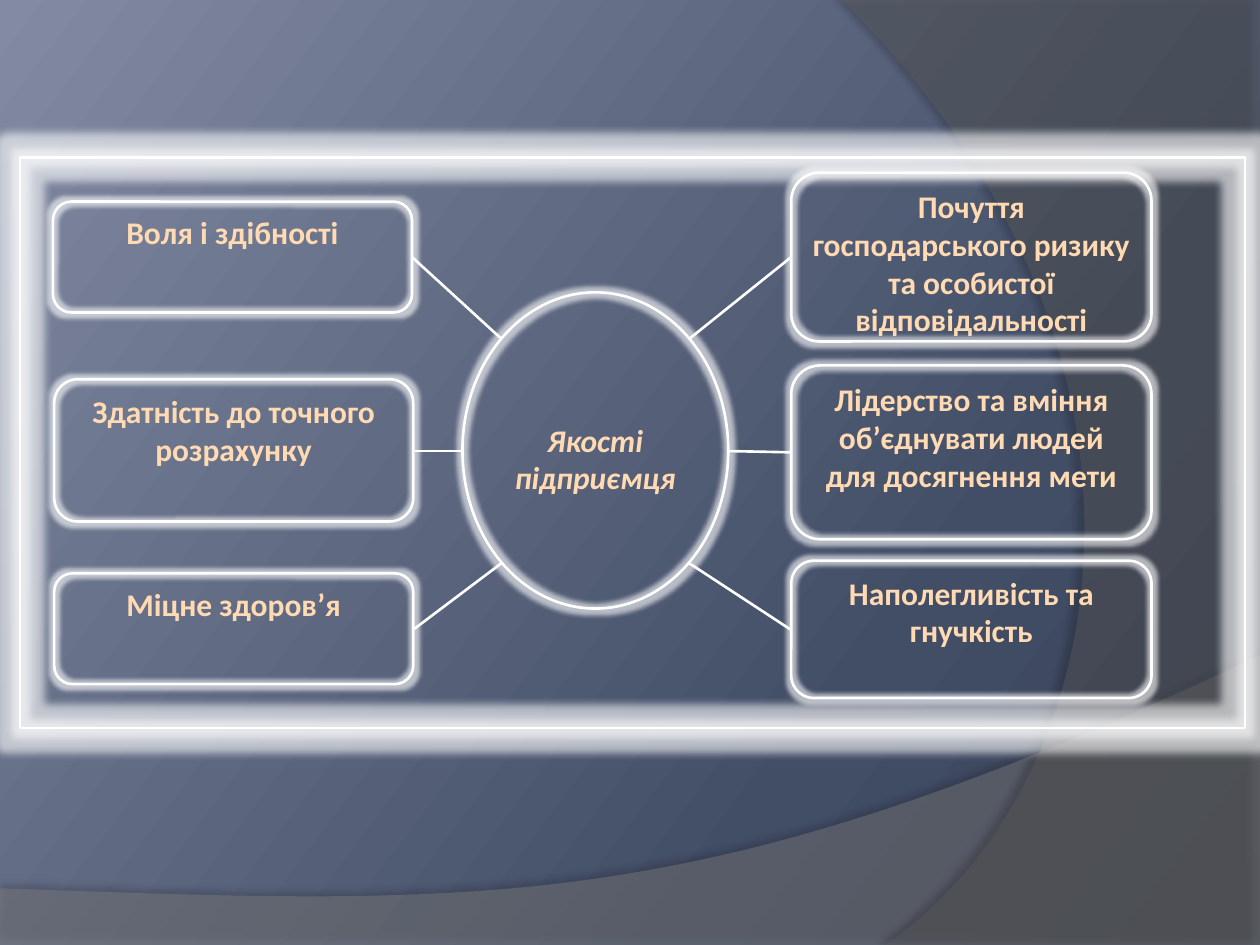
"""Build the slide on the qualities of an entrepreneur."""
from pptx import Presentation
from pptx.dml.color import RGBColor
from pptx.enum.shapes import MSO_CONNECTOR as CONN, MSO_SHAPE as SHAPE
from pptx.enum.text import MSO_ANCHOR as ANCHOR, PP_ALIGN as ALIGN
from pptx.oxml import parse_xml
from pptx.oxml.ns import nsdecls
from pptx.util import Inches, Pt

WHITE = RGBColor(0xFF, 0xFF, 0xFF)
BLACK = RGBColor(0x00, 0x00, 0x00)
PEACH = RGBColor(0xFF, 0xDA, 0xB2)
GREY = RGBColor(0x7F, 0x7F, 0x7F)
DARK_GREY = RGBColor(0x5E, 0x5E, 0x5E)
NAVY = RGBColor(0x37, 0x40, 0x56)
SLATE = RGBColor(0x42, 0x4D, 0x66)
STEEL = RGBColor(0x82, 0x8B, 0xA3)


def add_effect(sp, tag, color, alpha, **attrs):
    values = " ".join(f'{name}="{value}"' for name, value in attrs.items())
    sp._element.spPr.append(parse_xml(
        f'<a:effectLst {nsdecls("a")}><a:{tag} {values}><a:srgbClr val="{color}">'
        f'<a:alpha val="{alpha * 1000}"/></a:srgbClr></a:{tag}></a:effectLst>'))


def write(sp, text, size=18, color=PEACH, font="Calibri", italic=False, top=0.05):
    tf = sp.text_frame
    tf.word_wrap = True
    tf.vertical_anchor = ANCHOR.TOP
    tf.margin_top = Inches(top)
    p = tf.paragraphs[0]
    p.alignment = ALIGN.CENTER
    r = p.add_run()
    r.text = text
    r.font.size = Pt(size)
    r.font.name = font
    r.font.bold = True
    r.font.italic = italic
    r.font.color.rgb = color


prs = Presentation()
prs.slide_width, prs.slide_height = Inches(10), Inches(7.5)
s = prs.slides.add_slide(prs.slide_layouts[6])

stops = "".join(
    f'<a:gs pos="{pos * 1000}"><a:srgbClr val="{color}"/></a:gs>'
    for pos, color in ((0, NAVY), (30, SLATE), (100, STEEL)))
s.element.cSld.insert(0, parse_xml(
    f'<p:bg {nsdecls("p", "a")}><p:bgPr><a:gradFill rotWithShape="1"><a:gsLst>{stops}'
    f'</a:gsLst><a:lin ang="{217 * 60000}" scaled="0"/></a:gradFill>'
    '<a:effectLst/></p:bgPr></p:bg>'))

waves = [
    ([(10, 5.2), (5.59, 7.29), (3.91, 7.19), (0, 7.05)],
     [(0, 7.5), (10, 7.5)], GREY, 45, 35, 3.5, 270),
    ([(7.03, 7.5), (8.91, 6.19), (9.47, 2.75), (6.68, 0)],
     [(10, 0), (10, 7.5)], DARK_GREY, 40, 45, 4, 180),
]
STEPS = 48
for curve, corners, color, alpha, shade, dist, angle in waves:
    points = []
    for i in range(STEPS + 1):
        t = i / STEPS
        weights = ((1 - t) ** 3, 3 * t * (1 - t) ** 2, 3 * t * t * (1 - t), t ** 3)
        points.append(tuple(sum(w * pt[axis] for w, pt in zip(weights, curve))
                            for axis in (0, 1)))
    points = [(Inches(x), Inches(y)) for x, y in points + corners]
    fb = s.shapes.build_freeform(*points[0])
    fb.add_line_segments(points[1:], close=True)
    sp = fb.convert_to_shape()
    sp.fill.solid()
    sp.fill.fore_color.rgb = color
    sp.fill._xPr.solidFill[0].append(
        parse_xml(f'<a:alpha {nsdecls("a")} val="{alpha * 1000}"/>'))
    sp.line.fill.background()
    add_effect(sp, "outerShdw", BLACK, shade, blurRad=Pt(4), dist=Pt(dist),
               dir=angle * 60000, algn="ctr", rotWithShape=0)

boxes = [
    (SHAPE.RECTANGLE, 0.16, 1.25, 9.72, 4.53, ""),
    (SHAPE.OVAL, 3.67, 2.32, 2.11, 2.51, "Якості підприємця"),
    (SHAPE.ROUNDED_RECTANGLE, 0.42, 1.6, 2.85, 0.88, "Воля і здібності"),
    (SHAPE.ROUNDED_RECTANGLE, 0.43, 3.01, 2.85, 1.13, "Здатність до точного розрахунку"),
    (SHAPE.ROUNDED_RECTANGLE, 0.43, 4.55, 2.85, 0.88, "Міцне здоров’я"),
    (SHAPE.ROUNDED_RECTANGLE, 6.28, 1.37, 2.86, 1.34,
     "Почуття господарського ризику та особистої відповідальності"),
    (SHAPE.ROUNDED_RECTANGLE, 6.28, 2.9, 2.86, 1.38,
     "Лідерство та вміння об’єднувати людей для досягнення мети"),
    (SHAPE.ROUNDED_RECTANGLE, 6.28, 4.45, 2.86, 1.09, "Наполегливість та гнучкість"),
]
for kind, x, y, w, h, text in boxes:
    sp = s.shapes.add_shape(kind, Inches(x), Inches(y), Inches(w), Inches(h))
    sp.fill.background()
    sp.line.color.rgb = WHITE
    sp.line.width = Pt(1.5)
    add_effect(sp, "glow", WHITE, 60, rad=Pt(5 if text else 9))
    if text:
        center = kind == SHAPE.OVAL
        write(sp, text, italic=center, top=0.65 if center else 0.05)

links = [
    (3.98, 2.69, 3.27, 2.04), (3.67, 3.58, 3.29, 3.58), (3.98, 4.47, 3.29, 4.99),
    (5.47, 2.69, 6.28, 2.04), (5.78, 3.58, 6.28, 3.59), (5.47, 4.47, 6.28, 5),
]
for ends in links:
    link = s.shapes.add_connector(CONN.STRAIGHT, *(Inches(v) for v in ends))
    link.line.color.rgb = WHITE
    link.line.width = Pt(1.5)
    add_effect(link, "glow", WHITE, 60, rad=Pt(5))

prs.save("out.pptx")
